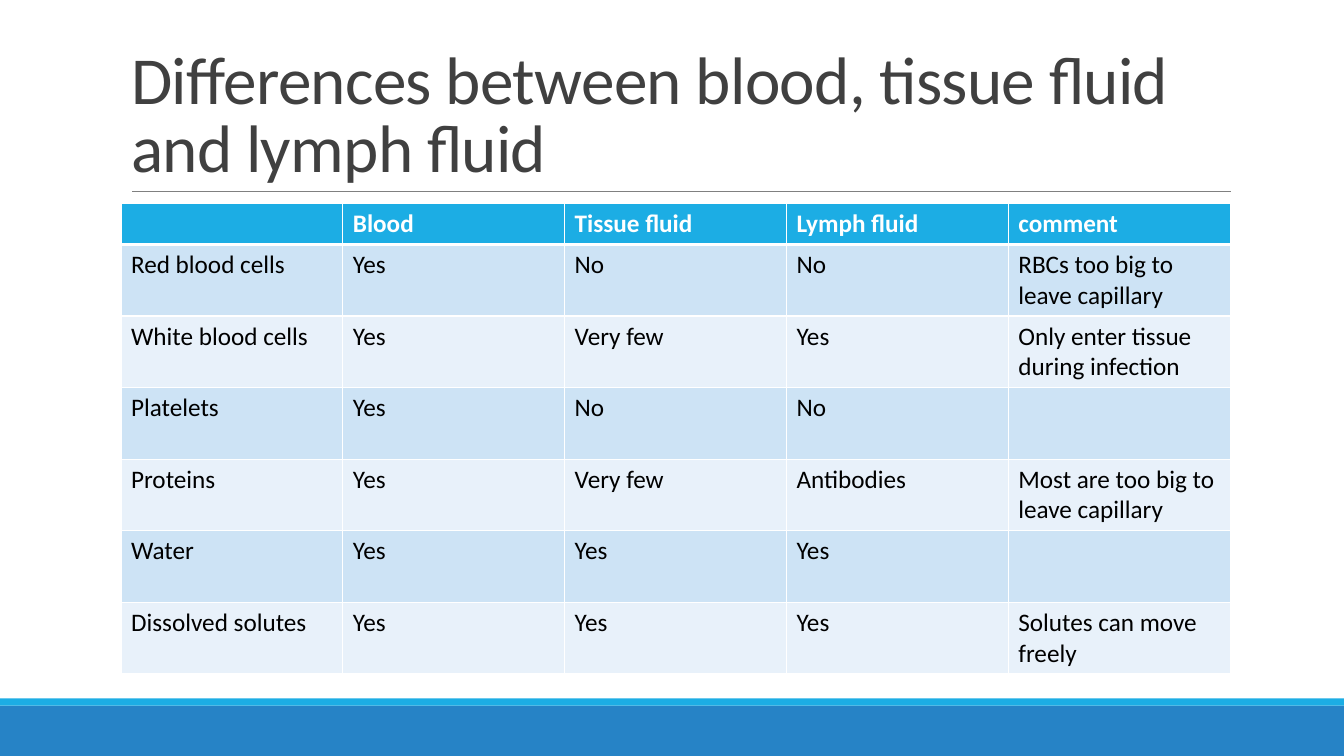
from dataclasses import dataclass

from lxml import etree
from pptx import Presentation
from pptx.dml.color import RGBColor
from pptx.enum.shapes import MSO_CONNECTOR, MSO_SHAPE
from pptx.enum.text import MSO_ANCHOR, MSO_AUTO_SIZE, PP_ALIGN
from pptx.oxml.ns import qn
from pptx.util import Cm, Pt

RECTANGLE = MSO_SHAPE.RECTANGLE
STRAIGHT = MSO_CONNECTOR.STRAIGHT
BOTTOM = MSO_ANCHOR.BOTTOM
NO_AUTOFIT = MSO_AUTO_SIZE.NONE
LEFT = PP_ALIGN.LEFT


@dataclass(frozen=True)
class Theme:
    font: str = "Calibri"
    title_size: int = 48
    table_size: int = 18
    title: str = "404040"
    text: str = "000000"
    white: str = "FFFFFF"
    rule: str = "808080"
    blue: str = "2683C6"
    cyan: str = "1CADE4"
    bands: tuple = ("E8F1FA", "CDE3F5")


THEME = Theme()
ROWS = [
    ("", "Blood", "Tissue fluid", "Lymph fluid", "comment"),
    ("Red blood cells", "Yes", "No", "No", "RBCs too big to leave capillary"),
    ("White blood cells", "Yes", "Very few", "Yes", "Only enter tissue during infection"),
    ("Platelets", "Yes", "No", "No", ""),
    ("Proteins", "Yes", "Very few", "Antibodies", "Most are too big to leave capillary"),
    ("Water", "Yes", "Yes", "Yes", ""),
    ("Dissolved solutes", "Yes", "Yes", "Yes", "Solutes can move freely"),
]


def write(frame, text, size=THEME.table_size, color=THEME.text, bold=False, line_spacing=1.0):
    """Put one left-aligned run of text in the frame and return the run."""
    para = frame.paragraphs[0]
    para.alignment = LEFT
    para.line_spacing = line_spacing
    span = para.add_run()
    span.text = text
    span.font.name = THEME.font
    span.font.size = Pt(size)
    span.font.bold = bold
    span.font.color.rgb = RGBColor.from_string(color)
    return span


def add_border(cell, side, points):
    """Draw a white border on one side (L, R, T or B); call before filling the cell."""
    properties = cell._tc.get_or_add_tcPr()
    line = etree.SubElement(properties, qn(f"a:ln{side}"), w=str(Pt(points)))
    fill = etree.SubElement(line, qn("a:solidFill"))
    etree.SubElement(fill, qn("a:srgbClr"), val=THEME.white)


deck = Presentation()
deck.slide_width, deck.slide_height = Cm(33.87), Cm(19.05)
page = deck.slides.add_slide(deck.slide_layouts[5])

# Footer bands
for top, height, color in [(17.78, 1.27, THEME.blue), (17.6, 0.18, THEME.cyan)]:
    band = page.shapes.add_shape(RECTANGLE, 0, Cm(top), deck.slide_width, Cm(height))
    band.shadow.inherit = False
    band.fill.solid()
    band.fill.fore_color.rgb = RGBColor.from_string(color)
    band.line.fill.background()

# Title and the rule below it
title = page.shapes.title
title.left, title.top, title.width, title.height = Cm(3.05), Cm(0.79), Cm(27.94), Cm(4.04)
title.text_frame.word_wrap = True
title.text_frame.auto_size = NO_AUTOFIT
title.text_frame.vertical_anchor = BOTTOM
heading = write(
    title.text_frame,
    "Differences between blood, tissue fluid and lymph fluid",
    size=THEME.title_size,
    color=THEME.title,
    line_spacing=0.85,
)
heading.font._element.set("spc", "-50")

rule = page.shapes.add_connector(STRAIGHT, Cm(3.33), Cm(4.83), Cm(31.01), Cm(4.83))
rule.line.color.rgb = RGBColor.from_string(THEME.rule)
rule.line.width = Pt(0.5)
etree.SubElement(rule._element.spPr, qn("a:effectLst"))

# Comparison table
table = page.shapes.add_table(
    len(ROWS), len(ROWS[0]), Cm(3.05), Cm(5.13), Cm(27.94), Cm(11.83)
).table
for column in table.columns:
    column.width = Cm(5.59)

for row_index, texts in enumerate(ROWS):
    is_header = row_index == 0
    table.rows[row_index].height = Cm(1.03 if is_header else 1.8)
    fill_color = THEME.cyan if is_header else THEME.bands[row_index % 2]
    for column_index, text in enumerate(texts):
        cell = table.cell(row_index, column_index)
        for side in "LRTB":
            touches_header_line = (row_index, side) in [(0, "B"), (1, "T")]
            add_border(cell, side, 3 if touches_header_line else 1)
        cell.fill.solid()
        cell.fill.fore_color.rgb = RGBColor.from_string(fill_color)
        if text:
            text_color = THEME.white if is_header else THEME.text
            write(cell.text_frame, text, color=text_color, bold=is_header)

deck.save("out.pptx")
